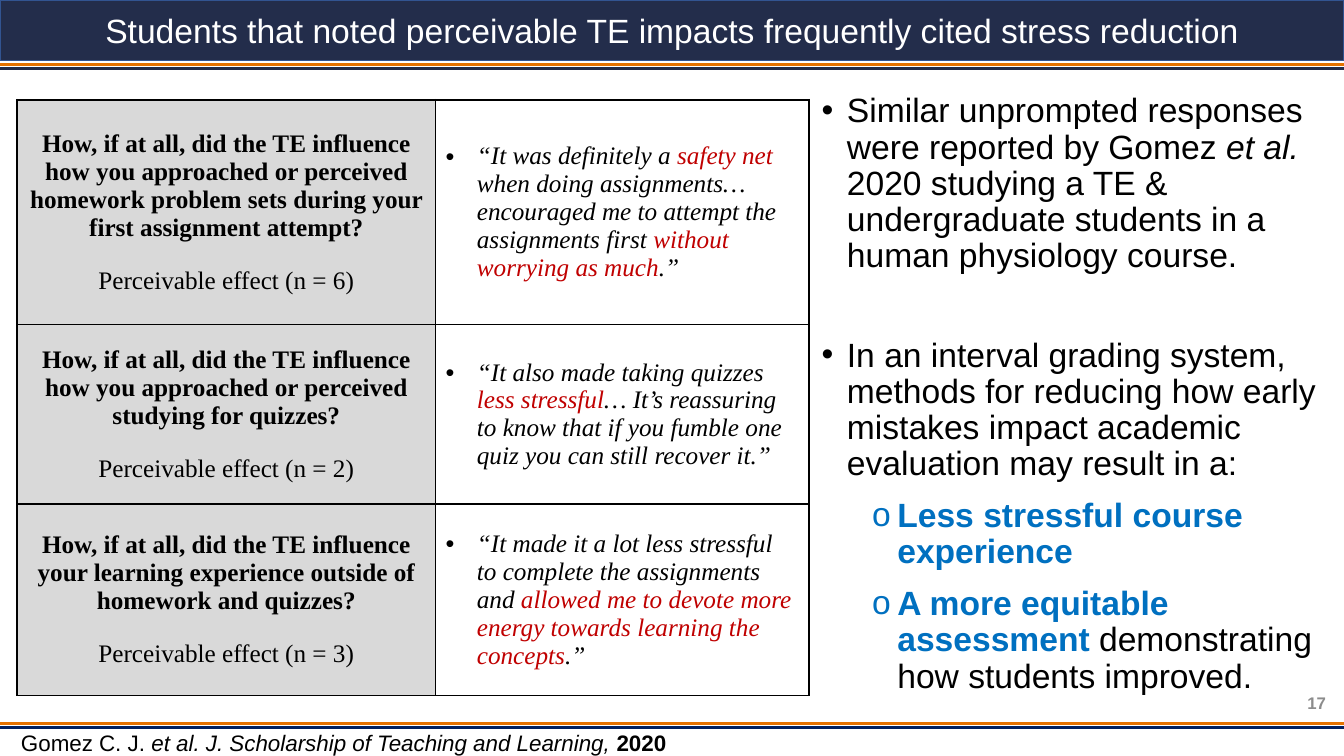
from dataclasses import dataclass

from lxml import etree
from pptx import Presentation
from pptx.dml.color import RGBColor
from pptx.enum.shapes import MSO_CONNECTOR
from pptx.enum.text import MSO_ANCHOR, MSO_AUTO_SIZE, PP_ALIGN
from pptx.oxml.ns import qn
from pptx.util import Pt

EMU_PER_PX = 9144
STRAIGHT = MSO_CONNECTOR.STRAIGHT
MIDDLE, TOP = MSO_ANCHOR.MIDDLE, MSO_ANCHOR.TOP
LEFT, CENTER, RIGHT = PP_ALIGN.LEFT, PP_ALIGN.CENTER, PP_ALIGN.RIGHT
NO_AUTOFIT = MSO_AUTO_SIZE.NONE
WIDTH, HEIGHT = 1333, 750


@dataclass(frozen=True)
class Theme:
    sans: str = "Arial"
    serif: str = "Times New Roman"
    heading_size: int = 24
    table_size: int = 18
    citation_size: int = 16
    number_size: int = 12
    black: str = "000000"
    white: str = "FFFFFF"
    navy: str = "232D4B"
    band_edge: str = "325491"
    footer_navy: str = "002060"
    orange: str = "E57200"
    blue: str = "0070C0"
    red: str = "C00000"
    label_fill: str = "D9D9D9"
    number_gray: str = "8C8C8C"


def px(value):
    return round(value * EMU_PER_PX)


def rgb(value):
    return RGBColor.from_string(value)


class SlideBuilder:
    def __init__(self, presentation, theme):
        self.theme = theme
        self.slide = presentation.slides.add_slide(presentation.slide_layouts[1])

    def place(self, shape, left, top, width, height):
        shape.left, shape.top = px(left), px(top)
        shape.width, shape.height = px(width), px(height)

    def bullet(self, paragraph, character, margin, hanging):
        properties = paragraph._p.get_or_add_pPr()
        properties.set("marL", str(px(margin)))
        properties.set("indent", str(-px(hanging)))
        etree.SubElement(properties, qn("a:buFont")).set("typeface", self.theme.sans)
        etree.SubElement(properties, qn("a:buChar")).set("char", character)

    def fill_paragraph(self, paragraph, runs, font, size, color,
                       align=LEFT, bold=False, italic=False):
        paragraph.alignment = align
        paragraph.font.name = font
        paragraph.font.size = Pt(size)
        paragraph.font.bold = bold
        paragraph.font.italic = italic
        paragraph.font.color.rgb = rgb(color)
        for text, style in runs:
            run = paragraph.add_run()
            run.text = text
            if "bold" in style:
                run.font.bold = style["bold"]
            if "italic" in style:
                run.font.italic = style["italic"]
            if "color" in style:
                run.font.color.rgb = rgb(style["color"])

    def title(self, text, height):
        title = self.slide.shapes.title
        self.place(title, 0, 0, WIDTH, height)
        title.fill.solid()
        title.fill.fore_color.rgb = rgb(self.theme.navy)
        title.line.color.rgb = rgb(self.theme.band_edge)
        title.line.width = Pt(1)
        frame = title.text_frame
        frame.auto_size = NO_AUTOFIT
        frame.vertical_anchor = MIDDLE
        self.fill_paragraph(frame.paragraphs[0], [(text, {})], self.theme.sans,
                            self.theme.heading_size, self.theme.white, CENTER)

    def body(self, box, items):
        body = self.slide.placeholders[1]
        self.place(body, *box)
        frame = body.text_frame
        frame.auto_size = NO_AUTOFIT
        frame.vertical_anchor = TOP
        for index, (level, runs, space_after) in enumerate(items):
            paragraph = frame.add_paragraph() if index else frame.paragraphs[0]
            paragraph.level = level
            paragraph.line_spacing = 0.9
            paragraph.space_before = Pt((5 if level else 10) if index else 0)
            paragraph.space_after = Pt(space_after)
            self.bullet(paragraph, "o" if level else "•", 75 if level else 25, 25)
            self.fill_paragraph(paragraph, runs, self.theme.sans, self.theme.heading_size,
                                self.theme.blue if level else self.theme.black,
                                bold=bool(level))

    def rule(self, top, color):
        line = self.slide.shapes.add_connector(STRAIGHT, 0, px(top), px(WIDTH), px(top))
        line.line.color.rgb = rgb(color)
        line.line.width = Pt(2)
        etree.SubElement(line._element.spPr, qn("a:effectLst"))

    def text(self, box, runs, size, color, align=LEFT, bold=False, anchor=TOP):
        shape = self.slide.shapes.add_textbox(*map(px, box))
        frame = shape.text_frame
        frame.word_wrap = True
        frame.vertical_anchor = anchor
        self.fill_paragraph(frame.paragraphs[0], runs, self.theme.sans, size, color, align, bold)

    def style_cell(self, cell, fill):
        properties = cell._tc.get_or_add_tcPr()
        for side in ("lnL", "lnR", "lnT", "lnB"):
            border = etree.SubElement(properties, qn(f"a:{side}"), w=str(Pt(1.5)))
            solid = etree.SubElement(border, qn("a:solidFill"))
            etree.SubElement(solid, qn("a:srgbClr")).set("val", self.theme.black)
        cell.fill.solid()
        cell.fill.fore_color.rgb = rgb(fill)
        cell.vertical_anchor = MIDDLE

    def table(self, left, top, widths, heights, rows):
        theme = self.theme
        table = self.slide.shapes.add_table(
            len(rows), len(widths), px(left), px(top), px(sum(widths)), px(sum(heights))).table
        for column, width in zip(table.columns, widths):
            column.width = px(width)
        for row, height, (question, count, quote) in zip(table.rows, heights, rows):
            row.height = px(height)
            label, answer = row.cells
            self.style_cell(label, theme.label_fill)
            self.style_cell(answer, theme.white)
            self.fill_paragraph(label.text_frame.paragraphs[0], [(question, {})], theme.serif,
                                theme.table_size, theme.black, CENTER, bold=True)
            effect = label.text_frame.add_paragraph()
            effect.space_before = Pt(18)
            self.fill_paragraph(effect, [(f"Perceivable effect (n = {count})", {})], theme.serif,
                                theme.table_size, theme.black, CENTER)
            paragraph = answer.text_frame.paragraphs[0]
            self.bullet(paragraph, "•", 31, 31)
            self.fill_paragraph(paragraph, quote, theme.serif, theme.table_size,
                                theme.black, italic=True)


def main():
    presentation = Presentation()
    presentation.slide_width, presentation.slide_height = px(WIDTH), px(HEIGHT)
    theme = Theme()
    builder = SlideBuilder(presentation, theme)
    red = {"color": theme.red}
    plain = {"color": theme.black, "bold": False}

    builder.title("Students that noted perceivable TE impacts frequently cited stress reduction", 60)
    for top, color in ((64, theme.orange), (68, theme.navy),
                       (718, theme.orange), (722, theme.footer_navy)):
        builder.rule(top, color)

    builder.body((805, 88, 515, 647), [
        (0, [("Similar unprompted responses were reported by Gomez ", {}),
             ("et al. ", {"italic": True}),
             ("2020 studying a TE & undergraduate students in a human physiology course.", {})], 35),
        (0, [("In an interval grading system, methods for reducing how early mistakes "
              "impact academic evaluation may result in a:", {})], 6),
        (1, [("Less stressful course experience", {})], 6),
        (1, [("A more equitable assessment ", {}),
             ("demonstrating how students improved.", plain)], 6),
    ])

    builder.table(17, 99, (415, 370), (223, 178, 190), [
        ("How, if at all, did the TE influence how you approached or perceived "
         "homework problem sets during your first assignment attempt?", 6,
         [("“It was definitely a ", {}), ("safety net ", red),
          ("when doing assignments… encouraged me to attempt the assignments first ", {}),
          ("without worrying as much", red), (".”", {})]),
        ("How, if at all, did the TE influence how you approached or perceived "
         "studying for quizzes?", 2,
         [("“It also made taking quizzes ", {}), ("less stressful", red),
          ("… It’s reassuring to know that if you fumble one quiz "
           "you can still recover it.”", {})]),
        ("How, if at all, did the TE influence your learning experience "
         "outside of homework and quizzes?", 3,
         [("“It made it a lot less stressful to complete the assignments and ", {}),
          ("allowed me to devote more energy towards learning the concepts", red),
          (".”", {})]),
    ])

    builder.text((1218, 677, 107, 40), [("17", {})], theme.number_size,
                 theme.number_gray, RIGHT, bold=True, anchor=MIDDLE)
    builder.text((11, 718, 891, 37),
                 [("Gomez C. J. ", {}),
                  ("et al. J. Scholarship of Teaching and Learning, ", {"italic": True}),
                  ("2020", {"bold": True})], theme.citation_size, theme.black)
    presentation.save("out.pptx")


if __name__ == "__main__":
    main()
